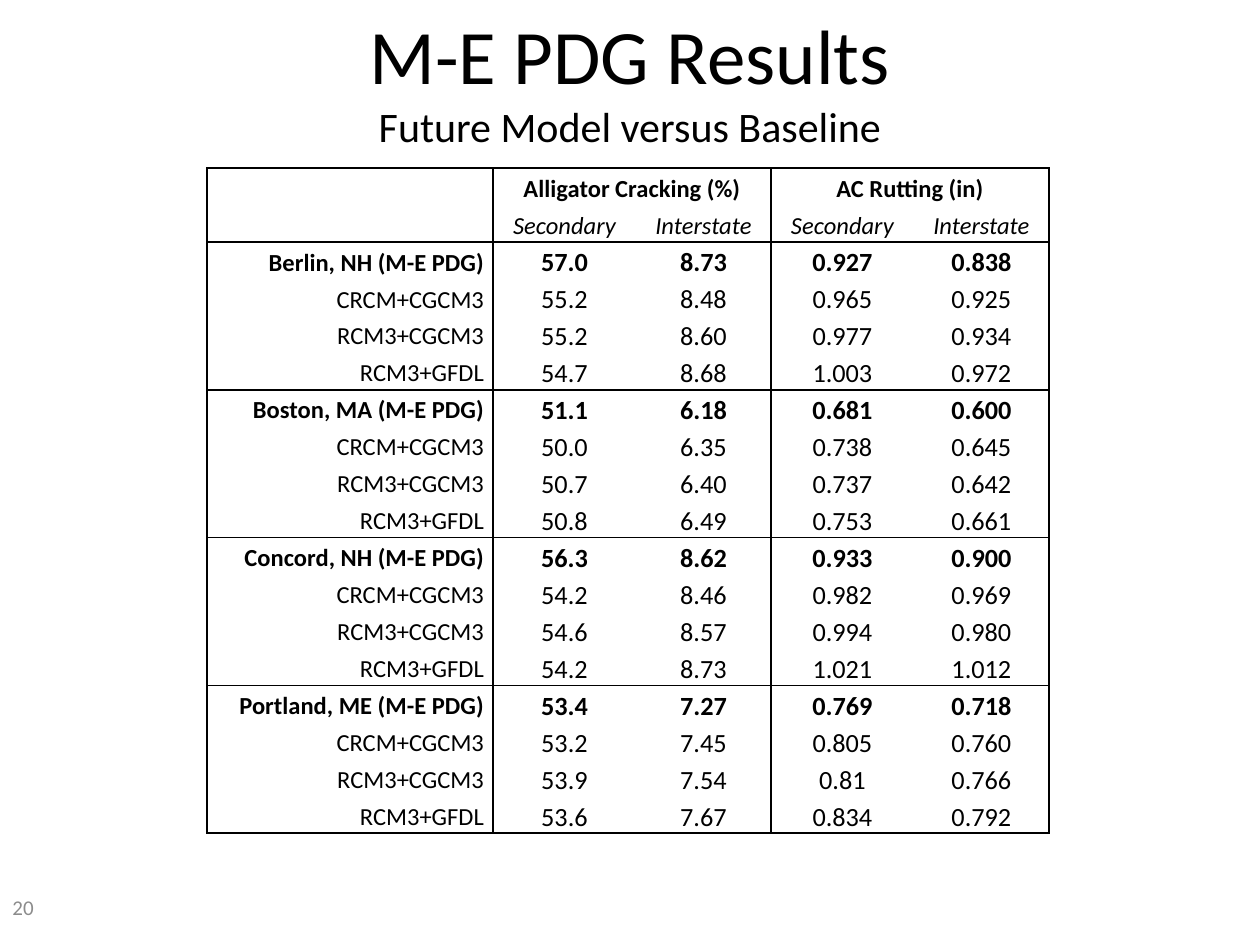
"""Build the slide of pavement results, future models against the baseline."""
from dataclasses import dataclass

from lxml.etree import SubElement
from pptx import Presentation
from pptx.dml.color import RGBColor
from pptx.enum.text import MSO_ANCHOR as Anchor, PP_ALIGN as Align
from pptx.oxml.ns import qn
from pptx.slide import Slide
from pptx.table import Table, _Cell as Cell
from pptx.text.text import Font, TextFrame
from pptx.util import Emu, Pt

EMU_PER_PX = 914400 / 126
SLIDE_SIZE = (1260, 945)
COLUMN_WIDTHS = (286, 143, 135, 143, 135)
ROW_HEIGHT = 37
CELL_INSET = 9
HEADER_ROWS = 2


@dataclass(frozen=True)
class Theme:
    font: str = "Calibri"
    ink: str = "000000"
    muted: str = "8C8C8C"
    title: int = 44
    subtitle: int = 24
    label: int = 14
    value: int = 15
    page: int = 12
    border: int = 1
    line_spacing: float = 1.15


@dataclass(frozen=True)
class Site:
    name: str
    baseline: str
    crcm_cgcm3: str
    rcm3_cgcm3: str
    rcm3_gfdl: str

    def rows(self) -> list[tuple[str, list[str]]]:
        return [
            (f"{self.name} (M-E PDG)", self.baseline.split()),
            ("CRCM+CGCM3", self.crcm_cgcm3.split()),
            ("RCM3+CGCM3", self.rcm3_cgcm3.split()),
            ("RCM3+GFDL", self.rcm3_gfdl.split()),
        ]


THEME = Theme()
MEASURES = ("Alligator Cracking (%)", "AC Rutting (in)")
ROADS = ("Secondary", "Interstate")
SITES = (
    Site("Berlin, NH", "57.0 8.73 0.927 0.838", "55.2 8.48 0.965 0.925",
         "55.2 8.60 0.977 0.934", "54.7 8.68 1.003 0.972"),
    Site("Boston, MA", "51.1 6.18 0.681 0.600", "50.0 6.35 0.738 0.645",
         "50.7 6.40 0.737 0.642", "50.8 6.49 0.753 0.661"),
    Site("Concord, NH", "56.3 8.62 0.933 0.900", "54.2 8.46 0.982 0.969",
         "54.6 8.57 0.994 0.980", "54.2 8.73 1.021 1.012"),
    Site("Portland, ME", "53.4 7.27 0.769 0.718", "53.2 7.45 0.805 0.760",
         "53.9 7.54 0.81 0.766", "53.6 7.67 0.834 0.792"),
)
SITE_ROWS = len(SITES[0].rows())
ROW_COUNT = HEADER_ROWS + SITE_ROWS * len(SITES)


def px(length: int) -> Emu:
    return Emu(round(length * EMU_PER_PX))


def style_font(font: Font, size: int, color: str = THEME.ink,
               bold: bool = False, italic: bool = False) -> None:
    font.name = THEME.font
    font.size = Pt(size)
    font.color.rgb = RGBColor.from_string(color)
    font.bold = bold
    font.italic = italic


def add_text_frame(slide: Slide, left: int, top: int, width: int, height: int) -> TextFrame:
    frame = slide.shapes.add_textbox(px(left), px(top), px(width), px(height)).text_frame
    frame.word_wrap = True
    frame.vertical_anchor = Anchor.MIDDLE
    return frame


def add_title(slide: Slide) -> None:
    paragraph = add_text_frame(slide, 63, 0, 1134, 158).paragraphs[0]
    paragraph.alignment = Align.CENTER
    title = paragraph.add_run()
    title.text = "M-E PDG Results"
    style_font(title.font, THEME.title)
    paragraph.add_line_break()
    subtitle = paragraph.add_run()
    subtitle.text = "Future Model versus Baseline"
    style_font(subtitle.font, THEME.subtitle)


def add_page_number(slide: Slide) -> None:
    paragraph = add_text_frame(slide, 0, 882, 294, 50).paragraphs[0]
    paragraph.text = "20"
    style_font(paragraph.font, THEME.page, THEME.muted)


def write_cell(cell: Cell, text: str, size: int, align: Align = Align.CENTER,
               bold: bool = False, italic: bool = False) -> None:
    paragraph = cell.text_frame.paragraphs[0]
    paragraph.text = text
    paragraph.alignment = align
    paragraph.line_spacing = THEME.line_spacing
    style_font(paragraph.font, size, bold=bold, italic=italic)


def set_borders(cell: Cell, sides: dict[str, bool]) -> None:
    properties = cell._tc.get_or_add_tcPr()
    for side, visible in sides.items():
        line = SubElement(properties, qn(f"a:ln{side}"), w=str(Pt(THEME.border)))
        if visible:
            fill = SubElement(line, qn("a:solidFill"))
            SubElement(fill, qn("a:srgbClr"), val=THEME.ink)
        else:
            SubElement(line, qn("a:noFill"))


def format_cell(cell: Cell, row: int, column: int) -> None:
    last_column = column + cell.span_width - 1 if cell.is_merge_origin else column
    group_row = (row - HEADER_ROWS) % SITE_ROWS
    set_borders(cell, {
        "L": column in (0, 1, 3),
        "R": last_column in (0, 2, 4),
        "T": row == 0 or (row >= HEADER_ROWS and group_row == 0),
        "B": row == HEADER_ROWS - 1 or (row >= HEADER_ROWS and group_row == SITE_ROWS - 1),
    })
    cell.fill.background()
    cell.vertical_anchor = Anchor.MIDDLE
    cell.margin_left = cell.margin_right = px(CELL_INSET)
    cell.margin_top = cell.margin_bottom = 0


def fill_header(table: Table) -> None:
    for row in range(HEADER_ROWS):
        corner = table.cell(row, 0).text_frame.paragraphs[0]
        corner._p.get_or_add_endParaRPr().set("sz", str(THEME.label * 100))
    for index, measure in enumerate(MEASURES):
        first = 1 + index * len(ROADS)
        heading = table.cell(0, first)
        heading.merge(table.cell(0, first + len(ROADS) - 1))
        write_cell(heading, measure, THEME.label, bold=True)
        for column, road in enumerate(ROADS, first):
            write_cell(table.cell(1, column), road, THEME.label, italic=True)


def fill_sites(table: Table) -> None:
    records = [record for site in SITES for record in site.rows()]
    for index, (label, values) in enumerate(records):
        row = HEADER_ROWS + index
        baseline = index % SITE_ROWS == 0
        write_cell(table.cell(row, 0), label, THEME.label, Align.RIGHT, bold=baseline)
        for column, value in enumerate(values, 1):
            write_cell(table.cell(row, column), value, THEME.value, bold=baseline)


def add_results_table(slide: Slide) -> None:
    table = slide.shapes.add_table(
        ROW_COUNT, len(COLUMN_WIDTHS), px(207), px(168),
        px(sum(COLUMN_WIDTHS)), px(ROW_HEIGHT * ROW_COUNT)).table
    table.first_row = table.horz_banding = False
    for column, width in zip(table.columns, COLUMN_WIDTHS):
        column.width = px(width)
    for row in table.rows:
        row.height = px(ROW_HEIGHT)
    fill_header(table)
    fill_sites(table)
    for row in range(ROW_COUNT):
        for column in range(len(COLUMN_WIDTHS)):
            format_cell(table.cell(row, column), row, column)


def main() -> None:
    presentation = Presentation()
    presentation.slide_width, presentation.slide_height = map(px, SLIDE_SIZE)
    slide = presentation.slides.add_slide(presentation.slide_layouts[6])
    add_title(slide)
    add_page_number(slide)
    add_results_table(slide)
    presentation.save("out.pptx")


if __name__ == "__main__":
    main()
